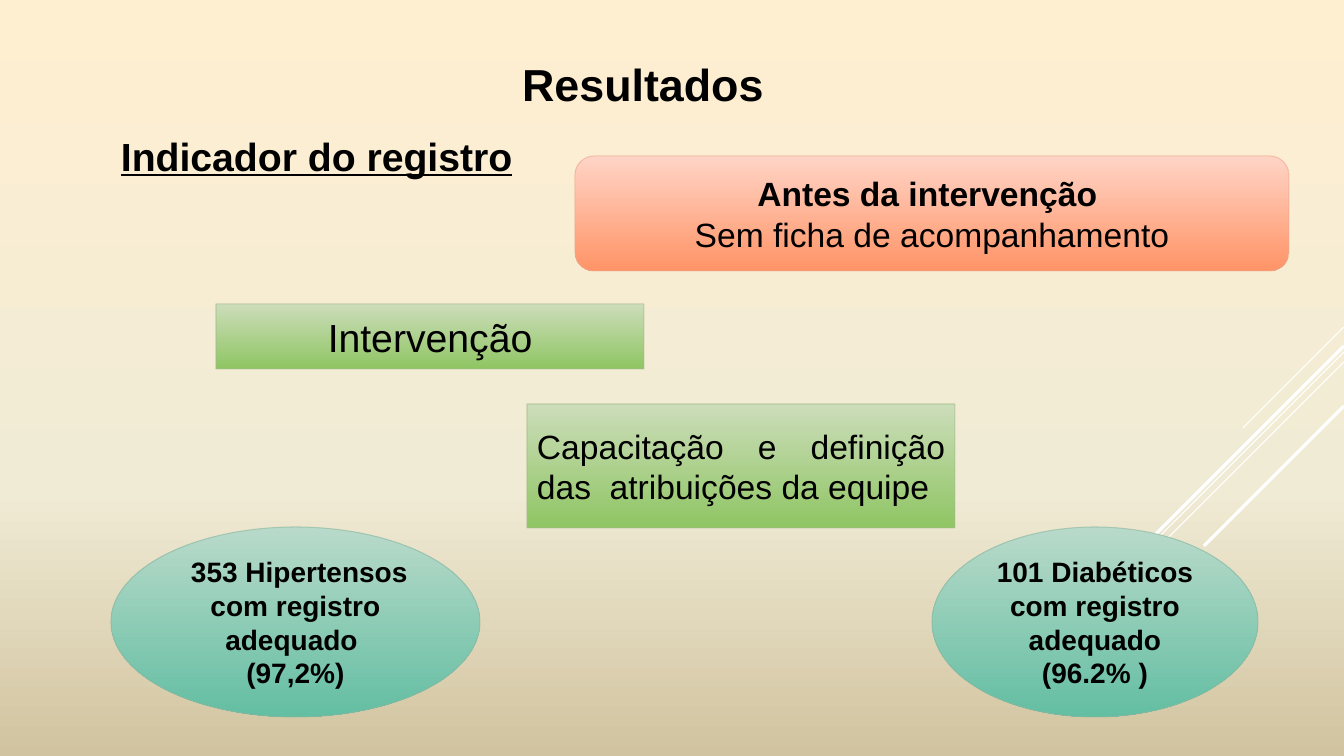
from lxml import etree
from copy import deepcopy
from pptx import Presentation
from pptx.dml.color import RGBColor
from pptx.enum.shapes import MSO_CONNECTOR as CONN, MSO_SHAPE as SHAPE
from pptx.enum.text import MSO_ANCHOR as ANCHOR, MSO_AUTO_SIZE as AUTO, PP_ALIGN as ALIGN
from pptx.oxml.ns import qn
from pptx.util import Pt

PX = 914400 / 100.8
W, H = 1344, 756
FONT = "Arial"
COLORS = {
    "text": "000000", "ray": "FFFFFF",
    "sky": "FFEFD1", "haze": "F0EBD5", "sand": "D1C39F",
    "coral_top": "FFD4C6", "coral_end": "FF9467", "coral_line": "EEA78F",
    "green_top": "CCDDBA", "green_end": "8FC563", "green_line": "A4BB8B",
    "teal_top": "B9DACA", "teal_end": "63BEA2", "teal_line": "8AB7A1",
}


def px(*values):
    """Turn pixel lengths into EMU."""
    return [round(v * PX) for v in values]


def rgb(name):
    """Look up a named colour."""
    return RGBColor.from_string(COLORS[name])


def paint_gradient(fill, stops):
    """Apply a top-to-bottom gradient of (position, colour) stops."""
    fill.gradient()
    fill.gradient_angle = 270
    for stop, (position, color) in zip(fill.gradient_stops, stops):
        stop.position = position
        stop.color.rgb = rgb(color)


def write(tf, lines, size, align=ALIGN.CENTER, underline=None):
    """Fill a text frame with (text, bold) paragraphs."""
    for i, (text, bold) in enumerate(lines):
        p = tf.paragraphs[0] if i == 0 else tf.add_paragraph()
        p.text = text
        p.alignment = align
        for r in p.runs:
            r.font.name, r.font.size = FONT, Pt(size)
            r.font.bold, r.font.underline = bold, underline
            r.font.color.rgb = rgb("text")


def add_background(slide):
    """Paint the three-stop page gradient."""
    fill = slide.background.fill
    paint_gradient(fill, [(0, "sky"), (1, "sand")])
    first = slide.element.xpath(".//p:bg//a:gs")[0]
    first.addnext(deepcopy(first))
    middle = fill.gradient_stops[1]
    middle.position = 0.65
    middle.color.rgb = rgb("haze")


def add_rays(slide, right):
    """Draw the 45-degree rays that run down from the right edge."""
    rays = [(327, 101, 0.75), (352, 329, 0.75), (362, 209, 0.75),
            (346, 192, 2.25), (406, 140, 2.25)]
    for top, run, width in rays:
        ray = slide.shapes.add_connector(
            CONN.STRAIGHT, *px(right, top, right - run, top + run))
        ray.line.color.rgb = rgb("ray")
        ray.line.width = Pt(width)
        etree.SubElement(ray.element.spPr, qn("a:effectLst"))


def add_heading(sp, box, text, size, underline=None):
    """Place and format a one-line bold heading."""
    sp.left, sp.top, sp.width, sp.height = px(*box)
    tf = sp.text_frame
    tf.word_wrap = False
    tf.auto_size = AUTO.SHAPE_TO_FIT_TEXT
    tf.vertical_anchor = ANCHOR.TOP
    write(tf, [(text, True)], size, ALIGN.LEFT, underline)


def add_card(slide, kind, box, tone, lines, size, align=ALIGN.CENTER):
    """Add a gradient shape with a translucent outline and text."""
    sp = slide.shapes.add_shape(kind, *px(*box))
    sp.shadow.inherit = False
    paint_gradient(sp.fill, [(0, f"{tone}_top"), (1, f"{tone}_end")])
    sp.line.color.rgb = rgb(f"{tone}_line")
    sp.line.width = Pt(0.75)
    outline = sp.element.xpath("./p:spPr/a:ln//a:srgbClr")[0]
    etree.SubElement(outline, qn("a:alpha"), val="60000")
    tf = sp.text_frame
    tf.word_wrap = True
    tf.vertical_anchor = ANCHOR.MIDDLE
    write(tf, lines, size, align)


def add_results(slide):
    """Add the intervention steps and their two outcomes."""
    add_card(slide, SHAPE.ROUNDED_RECTANGLE, (575, 156, 714, 115), "coral",
             [("Antes da intervenção ", True), ("Sem ficha de acompanhamento", False)], 24)
    add_card(slide, SHAPE.RECTANGLE, (216, 304, 428, 65), "green",
             [("Intervenção", False)], 28)
    add_card(slide, SHAPE.RECTANGLE, (527, 404, 428, 124), "green",
             [("Capacitação e definição das  atribuições da equipe ", False)],
             24, ALIGN.JUSTIFY)
    outcomes = [(111, 369, " 353 Hipertensos com registro adequado ", "(97,2%)"),
                (932, 326, "101 Diabéticos com registro adequado", "(96.2% )")]
    for left, width, group, share in outcomes:
        add_card(slide, SHAPE.OVAL, (left, 527, width, 190), "teal",
                 [(group, True), (share, True)], 20)


def main():
    """Build and save the slide."""
    prs = Presentation()
    prs.slide_width, prs.slide_height = px(W, H)
    slide = prs.slides.add_slide(prs.slide_layouts[5])
    add_background(slide)
    add_rays(slide, W)
    add_heading(slide.shapes.title, (512, 52, 264, 65), "Resultados", 32)
    subtitle = slide.shapes.add_textbox(0, 0, 0, 0)
    add_heading(subtitle, (111, 127, 416, 57), "Indicador do registro", 28, True)
    add_results(slide)
    prs.save("out.pptx")


if __name__ == "__main__":
    main()
